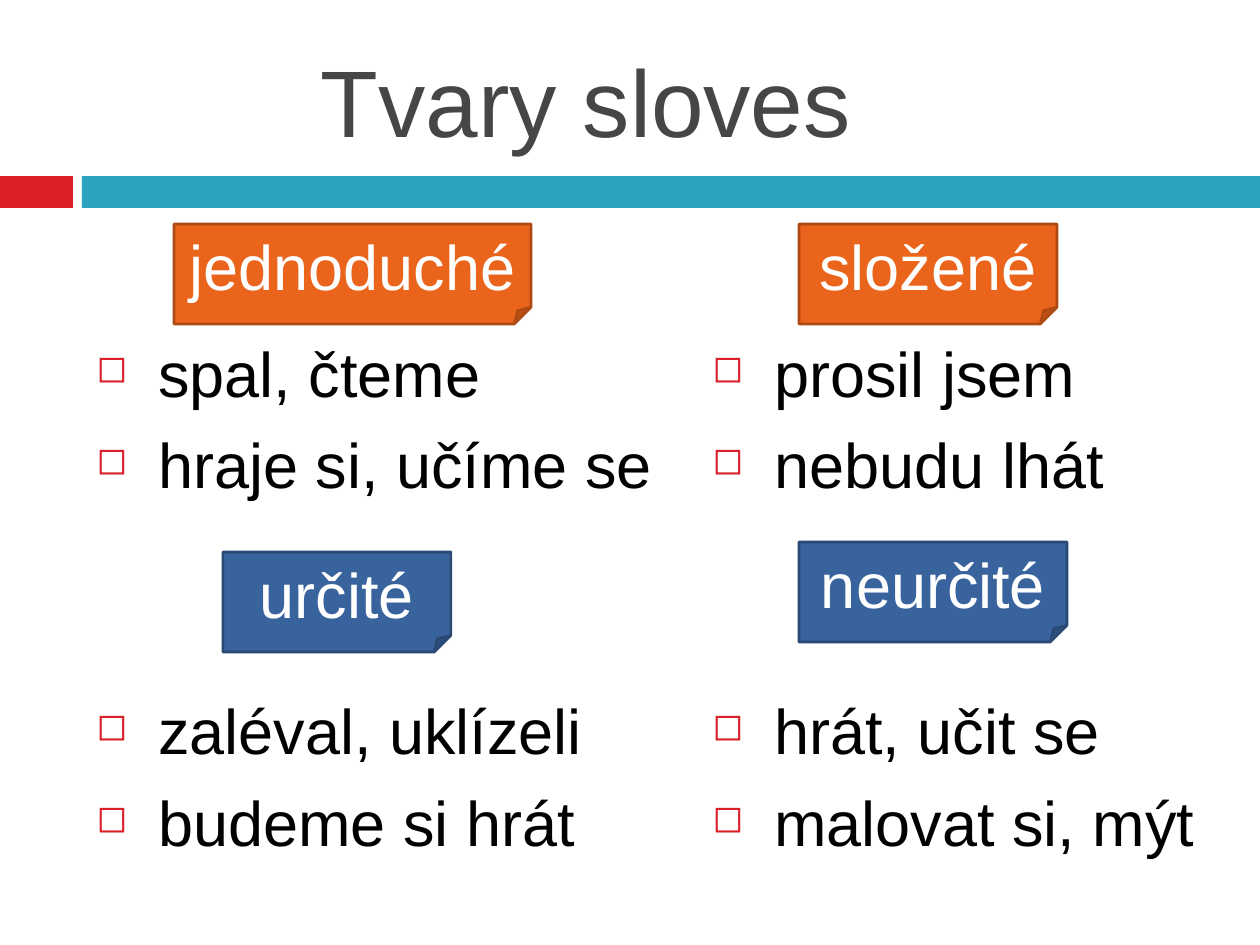
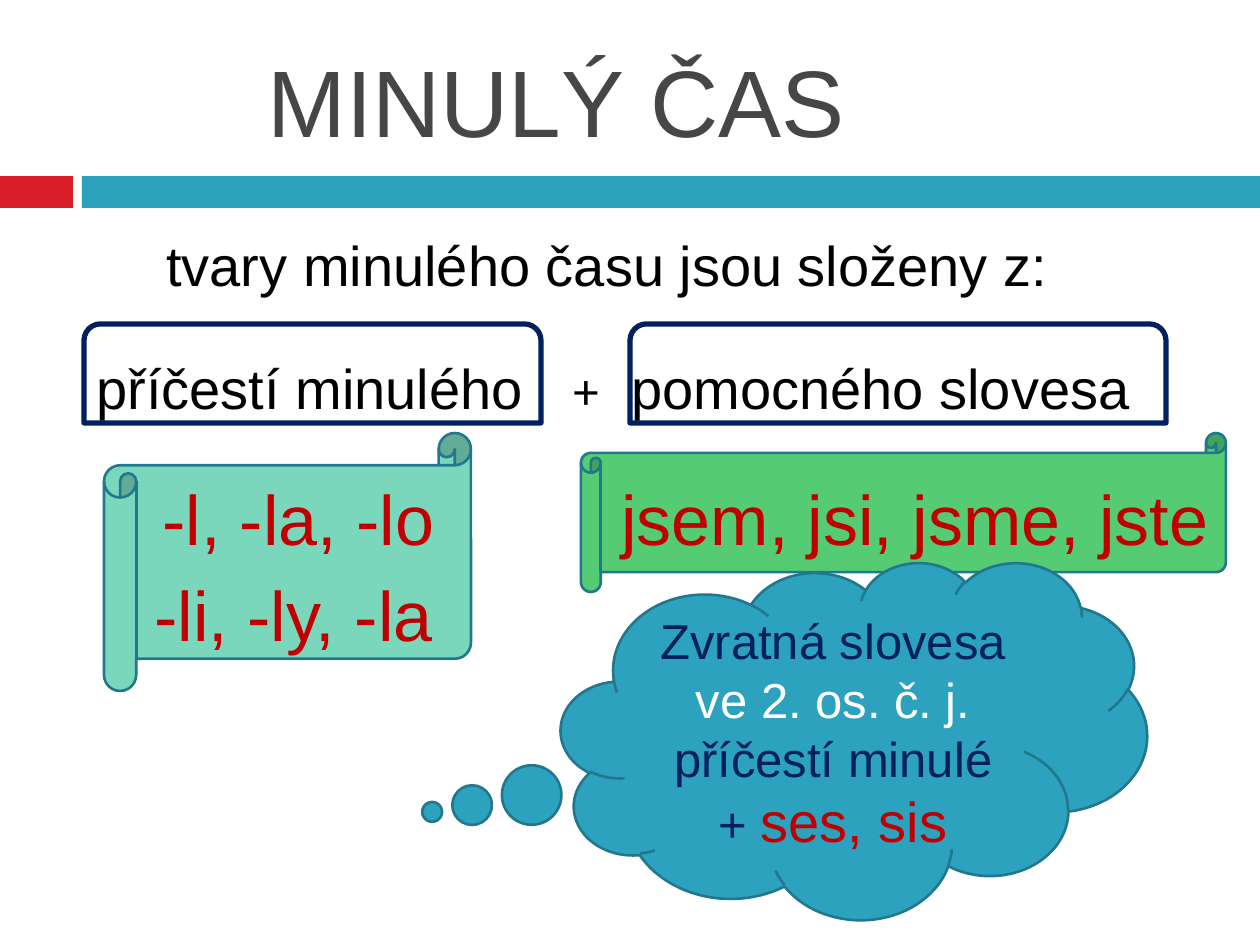
from lxml.etree import SubElement
from pptx import Presentation
from pptx.dml.color import RGBColor as Rgb
from pptx.enum.shapes import MSO_SHAPE as Kind
from pptx.enum.text import MSO_ANCHOR as Anchor, MSO_AUTO_SIZE as Fit, PP_ALIGN as Align
from pptx.oxml.ns import qn
from pptx.util import Pt

UNIT = 914400 / 126
HEX = dict(red="DA1F28", teal="2DA2BF", rim="21788D", gray="464646", black="000000",
           white="FFFFFF", fire="EB641B", rust="AE4A14", blue="39639D", deep="2A4974",
           navy="002060", mint="7BD7BB", green="55CB74", wine="C00000")

BANDS = [((0, 176, 73, 32), "red"), ((82, 176, 1178, 32), "teal")]
TITLES = [("Tvary sloves", 224), ("MINULÝ ČAS", 171)]
TITLE_BOX = (84, 32, 1124, 136)

LISTS = [
    ((84, 328, 596, 590), ["spal, čteme", "hraje si, učíme se",
                           "zaléval, uklízeli", "budeme si hrát"]),
    ((700, 328, 535, 590), ["prosil jsem", "nebudu lhát",
                            "hrát, učit se", "malovat si, mýt"]),
]
GAPS = [7, 9, 109, 9]
TAGS = [
    ("jednoduché", (174, 224, 357, 100), "fire", "rust"),
    ("složené", (799, 224, 258, 100), "fire", "rust"),
    ("určité", (223, 552, 228, 100), "blue", "deep"),
    ("neurčité", (799, 542, 268, 100), "blue", "deep"),
]

FRAMES = [
    (Kind.HORIZONTAL_SCROLL, (104, 433, 367, 258), "mint", "rim", 1.5),
    (Kind.HORIZONTAL_SCROLL, (581, 433, 645, 159), "green", "rim", 1.5),
    (Kind.ROUND_2_SAME_RECTANGLE, (630, 324, 536, 99), "white", "navy", 3),
    (Kind.ROUND_2_SAME_RECTANGLE, (84, 324, 457, 99), "white", "navy", 3),
]
INTRO = ("tvary minulého času jsou složeny z:", (154, 224, 932, 81))
ENDING = dict(size=40, color="wine", before=7)
PARTS = [
    ((84, 314, 536, 367), [
        ("příčestí minulého", dict(size=32, spread=1.5, before=7)),
        ("-l, -la, -lo", dict(ENDING, left=66, spread=1.5)),
        ("-li, -ly, -la", dict(ENDING, left=58)),
    ]),
    ((561, 314, 665, 277), [
        ([("+\t", dict(size=29, font="Calibri")), ("pomocného slovesa", {})],
         dict(size=32, left=58, first=-58, spread=1.5, before=7)),
        ("jsem, jsi, jsme, jste", dict(ENDING, left=48, spread=1.5)),
    ]),
]
CLOUD_BOX = (561, 562, 586, 357)
CLOUD = [
    ("Zvratná slovesa", dict(color="navy")),
    ("ve 2. os. č. j.", dict(color="white")),
    ("příčestí minulé", dict(color="navy")),
    ([("+ ", {}), ("ses, sis", dict(size=32, color="wine"))], dict(color="navy")),
]


def px(num):
    return round(num * UNIT)


def rgb(name):
    return Rgb.from_string(HEX[name])


def place(item, box):
    item.left, item.top, item.width, item.height = map(px, box)


def mark(props):
    tint = SubElement(props, qn("a:buClr"))
    SubElement(tint, qn("a:srgbClr"), val=HEX["red"])
    SubElement(props, qn("a:buSzPct"), val="60000")
    SubElement(props, qn("a:buChar"), char="◻")


def write(para, text, size=36, color="black", font="Arial", align=Align.LEFT,
          left=0, first=0, before=0, spread=None, bullet=False):
    para.alignment = align
    para.space_before = Pt(before)
    if spread:
        para.line_spacing = spread
    props = para._p.get_or_add_pPr()
    props.set("marL", str(px(left)))
    props.set("indent", str(px(first)))
    if bullet:
        mark(props)
    base = dict(size=size, color=color, font=font)
    for words, extra in [(text, {})] if isinstance(text, str) else text:
        look = base | extra
        run = para.add_run()
        run.text = words
        run.font.size = Pt(look["size"])
        run.font.name = look["font"]
        run.font.color.rgb = rgb(look["color"])


def fill(item, lines, anchor=Anchor.TOP, **look):
    frame = item.text_frame
    frame.word_wrap = True
    frame.auto_size = Fit.NONE
    frame.vertical_anchor = anchor
    for num, (text, extra) in enumerate(lines):
        para = frame.add_paragraph() if num else frame.paragraphs[0]
        write(para, text, **(look | extra))


def shape(slide, kind, box, paint, edge=None, width=1.5):
    item = slide.shapes.add_shape(kind, *map(px, box))
    item.shadow.inherit = False
    item.fill.solid()
    item.fill.fore_color.rgb = rgb(paint)
    if edge:
        item.line.color.rgb = rgb(edge)
        item.line.width = Pt(width)
    else:
        item.line.fill.background()
    return item


def label(slide, box, lines, **look):
    fill(slide.shapes.add_textbox(*map(px, box)), lines, **look)


def start(deck, layout, title, left):
    slide = deck.slides.add_slide(layout)
    head = slide.shapes.title
    place(head, TITLE_BOX)
    fill(head, [(title, {})], Anchor.MIDDLE, size=54, color="gray", left=left)
    return slide


def forms(slide):
    for box, words in LISTS:
        lines = [(word, dict(before=gap)) for word, gap in zip(words, GAPS)]
        label(slide, box, lines, left=62, first=-62, bullet=True)
    for text, box, paint, edge in TAGS:
        tag = shape(slide, Kind.FOLDED_CORNER, box, paint, edge)
        fill(tag, [(text, {})], Anchor.MIDDLE, color="white", align=Align.CENTER)


def past(slide):
    for frame in FRAMES:
        shape(slide, *frame)
    for box, lines in PARTS:
        label(slide, box, lines)
    text, box = INTRO
    label(slide, box, [(text, {})], size=32)
    cloud = shape(slide, Kind.CLOUD_CALLOUT, CLOUD_BOX, "teal", "rim")
    cloud.adjustments[0], cloud.adjustments[1] = -0.72, 0.2
    fill(cloud, CLOUD, Anchor.MIDDLE, size=28, align=Align.CENTER)


def main():
    """Build the two slides on verb forms and the past tense."""
    deck = Presentation()
    deck.slide_width, deck.slide_height = px(1260), px(945)
    layout = deck.slide_layouts[5]
    one, two = [start(deck, layout, *title) for title in TITLES]
    for box, paint in BANDS:
        band = shape(one, Kind.RECTANGLE, box, paint)
        layout.shapes.element.append(band.element)
    forms(one)
    past(two)
    deck.save("out.pptx")


if __name__ == "__main__":
    main()
